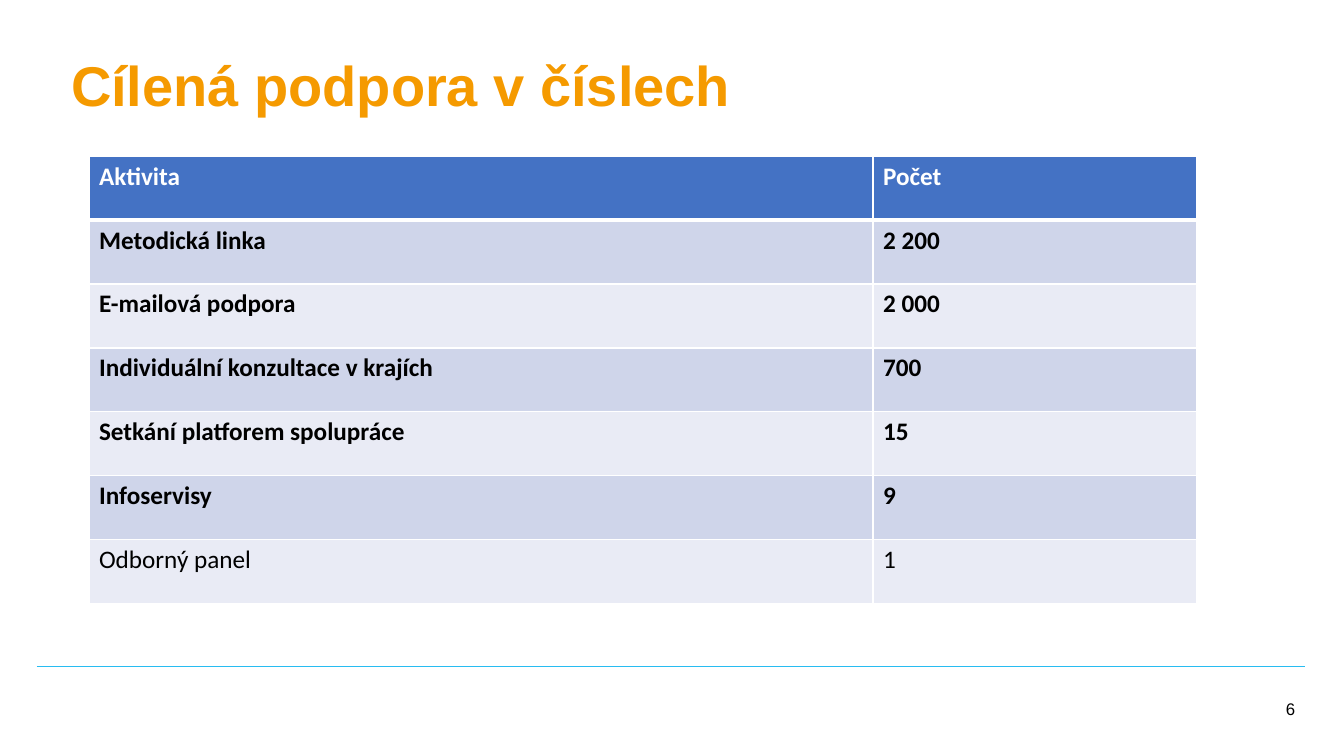
from lxml.etree import SubElement
from pptx import Presentation
from pptx.dml.color import RGBColor
from pptx.enum.shapes import MSO_CONNECTOR
from pptx.enum.text import MSO_ANCHOR, MSO_AUTO_SIZE, PP_ALIGN
from pptx.oxml.ns import qn
from pptx.util import Pt

PX = 914400 / 100.8
SLIDE_SIZE = (1344, 756)
COLORS = {
    "title": "F59A00",
    "rule": "28BCF1",
    "header": "4472C4",
    "odd_row": "CFD5EA",
    "even_row": "E9EBF5",
    "white": "FFFFFF",
    "black": "000000",
}
HEADINGS = ("Aktivita", "Počet")
ACTIVITIES = [
    ("Metodická linka", "2 200"),
    ("E-mailová podpora", "2 000"),
    ("Individuální konzultace v krajích", "700"),
    ("Setkání platforem spolupráce", "15"),
    ("Infoservisy", "9"),
    ("Odborný panel", "1"),
]


def px(length):
    return round(length * PX)


def color(name):
    return RGBColor.from_string(COLORS[name])


def add_run(paragraph, text, size, font_name, color_name, bold=False):
    run = paragraph.add_run()
    run.text = text
    run.font.size = Pt(size)
    run.font.name = font_name
    run.font.bold = bold
    run.font.color.rgb = color(color_name)


def place_title(slide, left, top, width, height):
    title = slide.shapes.title
    title.left, title.top = px(left), px(top)
    title.width, title.height = px(width), px(height)
    frame = title.text_frame
    frame.auto_size = MSO_AUTO_SIZE.NONE
    frame.vertical_anchor = MSO_ANCHOR.MIDDLE
    paragraph = frame.paragraphs[0]
    paragraph.alignment = PP_ALIGN.LEFT
    paragraph.line_spacing = 0.9
    add_run(paragraph, "Cílená podpora v číslech", 40, "Arial", "title", True)


def set_borders(cell, bottom_width):
    properties = cell._tc.get_or_add_tcPr()
    widths = {"a:lnL": 1, "a:lnR": 1, "a:lnT": 1, "a:lnB": bottom_width}
    for tag, width in widths.items():
        line = SubElement(properties, qn(tag), w=str(Pt(width)))
        fill = SubElement(line, qn("a:solidFill"))
        SubElement(fill, qn("a:srgbClr"), val=COLORS["white"])


def fill_cell(cell, text, fill_name, text_color, bold, bottom_width):
    set_borders(cell, bottom_width)
    cell.fill.solid()
    cell.fill.fore_color.rgb = color(fill_name)
    paragraph = cell.text_frame.paragraphs[0]
    add_run(paragraph, text, 18, "Calibri", text_color, bold)


def add_activity_table(slide, left, top, column_widths, row_height):
    rows = [HEADINGS, *ACTIVITIES]
    table = slide.shapes.add_table(
        len(rows), len(column_widths), px(left), px(top),
        px(sum(column_widths)), px(row_height * len(rows)),
    ).table
    for column, width in zip(table.columns, column_widths):
        column.width = px(width)
    for index, values in enumerate(rows):
        is_header = index == 0
        if is_header:
            fill_name = "header"
        else:
            fill_name = "odd_row" if index % 2 else "even_row"
        text_color = "white" if is_header else "black"
        bold = index < len(rows) - 1
        for column_index, text in enumerate(values):
            fill_cell(table.cell(index, column_index), text, fill_name,
                      text_color, bold, 3 if is_header else 1)


def add_footer(slide, left, top, width, height):
    """Rule along the top of the box, slide number at its lower right."""
    rule = slide.shapes.add_connector(
        MSO_CONNECTOR.STRAIGHT, px(left), px(top), px(left + width), px(top))
    rule.line.color.rgb = color("rule")
    rule.line.width = Pt(0.5)
    SubElement(rule._element.spPr, qn("a:effectLst"))

    number_width, number_height = 79, 40
    number = slide.shapes.add_textbox(
        px(left + width - number_width), px(top + height - number_height),
        px(number_width), px(number_height))
    frame = number.text_frame
    frame.word_wrap = True
    frame.vertical_anchor = MSO_ANCHOR.MIDDLE
    paragraph = frame.paragraphs[0]
    paragraph.alignment = PP_ALIGN.RIGHT
    add_run(paragraph, "6", 12, "Arial", "black")


def main():
    presentation = Presentation()
    presentation.slide_width, presentation.slide_height = map(px, SLIDE_SIZE)
    slide = presentation.slides.add_slide(presentation.slide_layouts[5])
    place_title(slide, 61, 40, 1216, 97)
    add_activity_table(slide, 89, 156, (784, 324), 64)
    add_footer(slide, 37, 666, 1268, 63)
    presentation.save("out.pptx")


if __name__ == "__main__":
    main()
